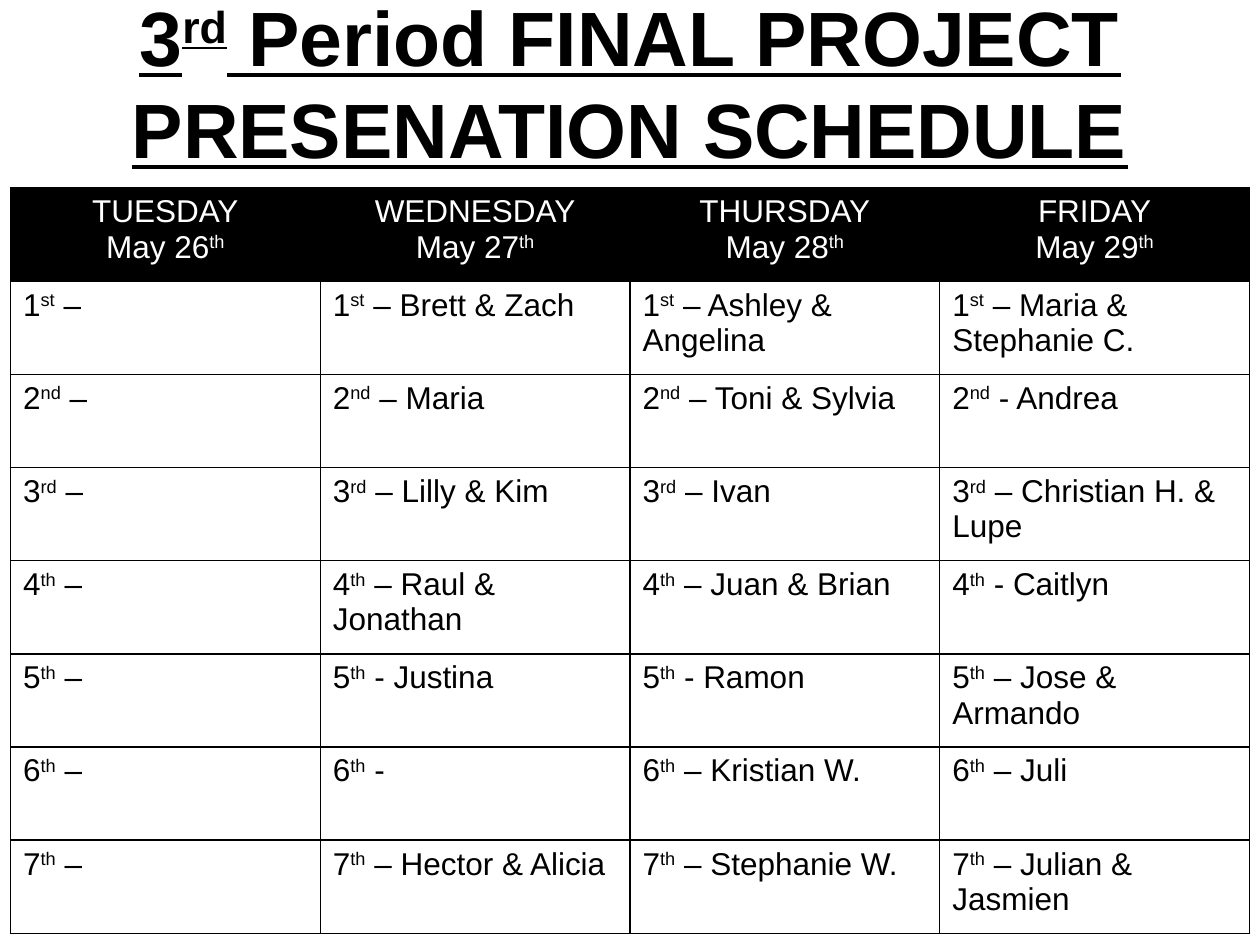
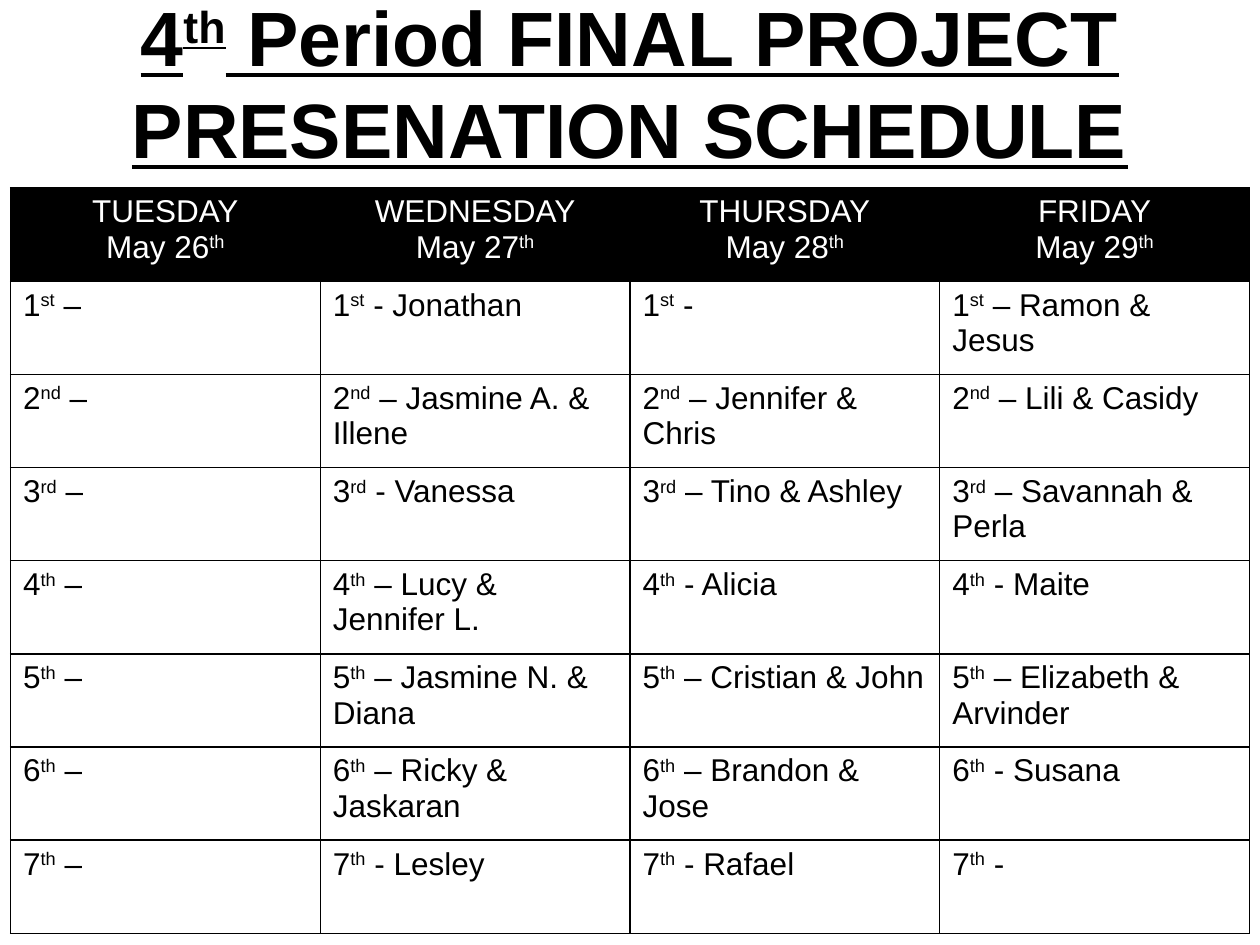
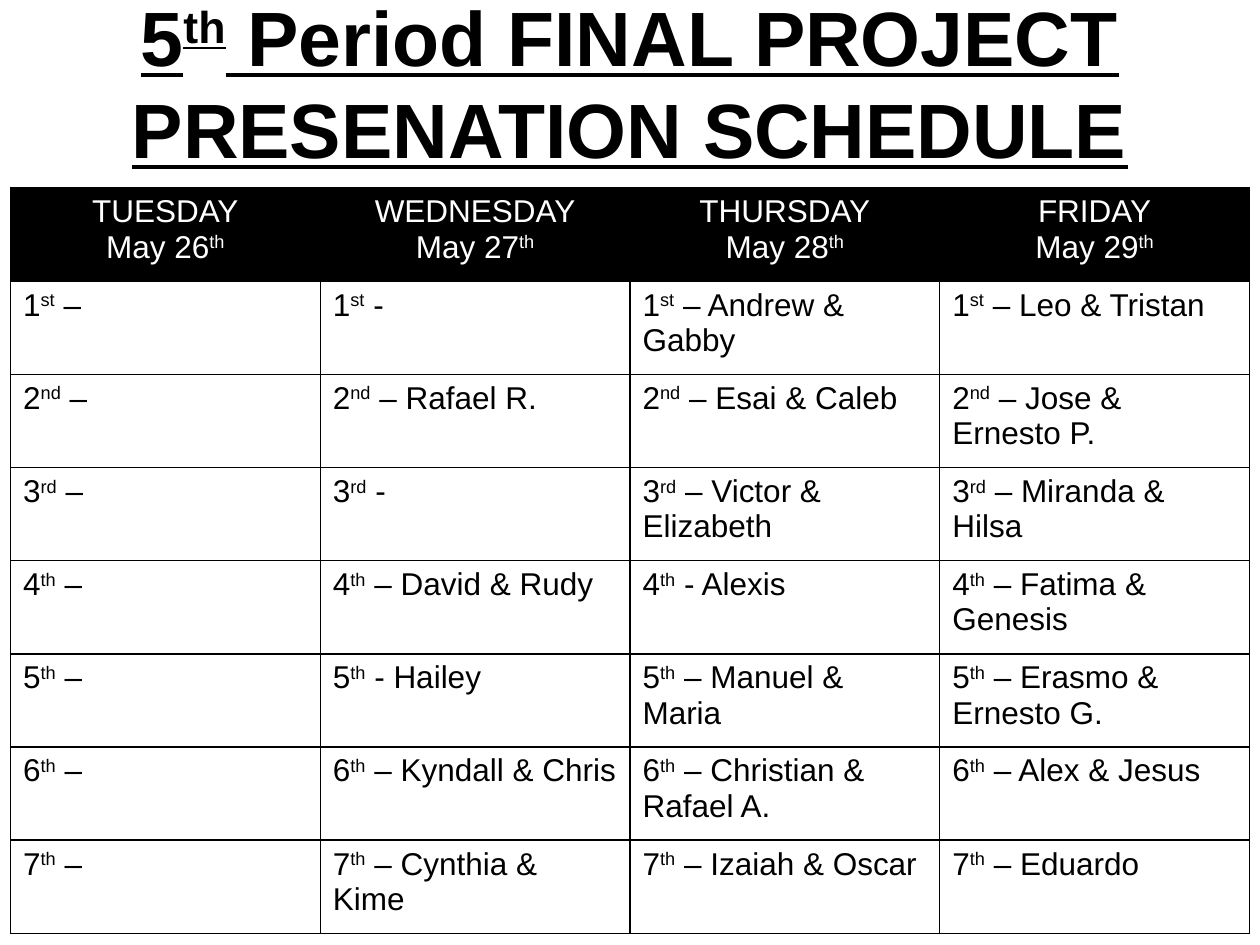
from lxml.etree import SubElement
from pptx import Presentation
from pptx.dml.color import RGBColor
from pptx.enum.text import MSO_ANCHOR as Anchor, PP_ALIGN as Align
from pptx.oxml.ns import qn
from pptx.util import Pt

BLACK, WHITE = "000000", "FFFFFF"
TITLE_FONT = {"name": "Arial", "size": Pt(44), "bold": True, "underline": True}
CELL_FONT = {"name": "Arial", "size": Pt(18), "bold": False}
TITLE_BOX = (0, 21.6, 720, 50.4)
TABLE_BOX = (6, 107.5, 708, 426)

DAYS = [("TUESDAY", 26), ("WEDNESDAY", 27), ("THURSDAY", 28), ("FRIDAY", 29)]
SUFFIXES = {1: "st", 2: "nd", 3: "rd"}

# Each row holds one presentation slot, with one entry for each day.
SCHEDULES = {
    3: [
        ("–", "– Brett & Zach", "– Ashley & Angelina", "– Maria & Stephanie C."),
        ("–", "– Maria", "– Toni & Sylvia", "- Andrea"),
        ("–", "– Lilly & Kim", "– Ivan", "– Christian H. & Lupe"),
        ("–", "– Raul & Jonathan", "– Juan & Brian", "- Caitlyn"),
        ("–", "- Justina", "- Ramon", "– Jose & Armando"),
        ("–", "-", "– Kristian W.", "– Juli"),
        ("–", "– Hector & Alicia", "– Stephanie W.", "– Julian & Jasmien"),
    ],
    4: [
        ("–", "- Jonathan", "-", "– Ramon & Jesus"),
        ("–", "– Jasmine A. & Illene", "– Jennifer & Chris", "– Lili & Casidy"),
        ("–", "- Vanessa", "– Tino & Ashley", "– Savannah & Perla"),
        ("–", "– Lucy & Jennifer L.", "- Alicia", "- Maite"),
        ("–", "– Jasmine N. & Diana", "– Cristian & John", "– Elizabeth & Arvinder"),
        ("–", "– Ricky & Jaskaran", "– Brandon & Jose", "- Susana"),
        ("–", "- Lesley", "- Rafael", "-"),
    ],
    5: [
        ("–", "-", "– Andrew & Gabby", "– Leo & Tristan"),
        ("–", "– Rafael R.", "– Esai & Caleb", "– Jose & Ernesto P."),
        ("–", "-", "– Victor & Elizabeth", "– Miranda & Hilsa"),
        ("–", "– David & Rudy", "- Alexis", "– Fatima & Genesis"),
        ("–", "- Hailey", "– Manuel & Maria", "– Erasmo & Ernesto G."),
        ("–", "– Kyndall & Chris", "– Christian & Rafael A.", "– Alex & Jesus"),
        ("–", "– Cynthia & Kime", "– Izaiah & Oscar", "– Eduardo"),
    ],
}


def color(hex_string):
    return RGBColor.from_string(hex_string)


def ordinal(number, rest=""):
    """Return the runs of an ordinal: digits, raised suffix, following text."""
    return [str(number), SUFFIXES.get(number, "th"), rest]


def write(text_frame, lines, font, hex_color, align):
    """Write lines of runs; the second run of a line is superscript."""
    for index, runs in enumerate(lines):
        paragraph = text_frame.paragraphs[0] if index == 0 else text_frame.add_paragraph()
        paragraph.alignment = align
        for position, text in enumerate(runs):
            if not text:
                continue
            run = paragraph.add_run()
            run.text = text
            for name, value in font.items():
                setattr(run.font, name, value)
            run.font.color.rgb = color(hex_color)
            if position == 1:
                run.font._element.set("baseline", "30000")


def set_borders(cell):
    properties = cell._tc.get_or_add_tcPr()
    for index, side in enumerate(("lnL", "lnR", "lnT", "lnB")):
        line = properties.makeelement(qn(f"a:{side}"), {"w": str(Pt(1))})
        fill = SubElement(line, qn("a:solidFill"))
        SubElement(fill, qn("a:srgbClr"), val=BLACK)
        properties.insert(index, line)


def add_title(slide, box, period):
    text_frame = slide.shapes.add_textbox(*map(Pt, box)).text_frame
    text_frame.word_wrap = True
    text_frame.vertical_anchor = Anchor.MIDDLE
    lines = [ordinal(period, " Period FINAL PROJECT"), ["PRESENATION SCHEDULE"]]
    write(text_frame, lines, TITLE_FONT, BLACK, Align.CENTER)


def fill_cell(cell, lines, background, hex_color, align):
    cell.fill.solid()
    cell.fill.fore_color.rgb = color(background)
    set_borders(cell)
    write(cell.text_frame, lines, CELL_FONT, hex_color, align)


def add_schedule(slide, box, slots):
    table = slide.shapes.add_table(len(slots) + 1, len(DAYS), *map(Pt, box)).table
    for column, (day, date) in enumerate(DAYS):
        lines = [[day], ordinal(f"May {date}")]
        fill_cell(table.cell(0, column), lines, BLACK, WHITE, Align.CENTER)
    for row, entries in enumerate(slots, start=1):
        for column, entry in enumerate(entries):
            lines = [ordinal(row, f" {entry}")]
            fill_cell(table.cell(row, column), lines, WHITE, BLACK, Align.LEFT)


def main():
    presentation = Presentation()
    presentation.slide_width, presentation.slide_height = Pt(720), Pt(540)
    for period, slots in SCHEDULES.items():
        slide = presentation.slides.add_slide(presentation.slide_layouts[6])
        add_title(slide, TITLE_BOX, period)
        add_schedule(slide, TABLE_BOX, slots)
    presentation.save("out.pptx")


if __name__ == "__main__":
    main()
